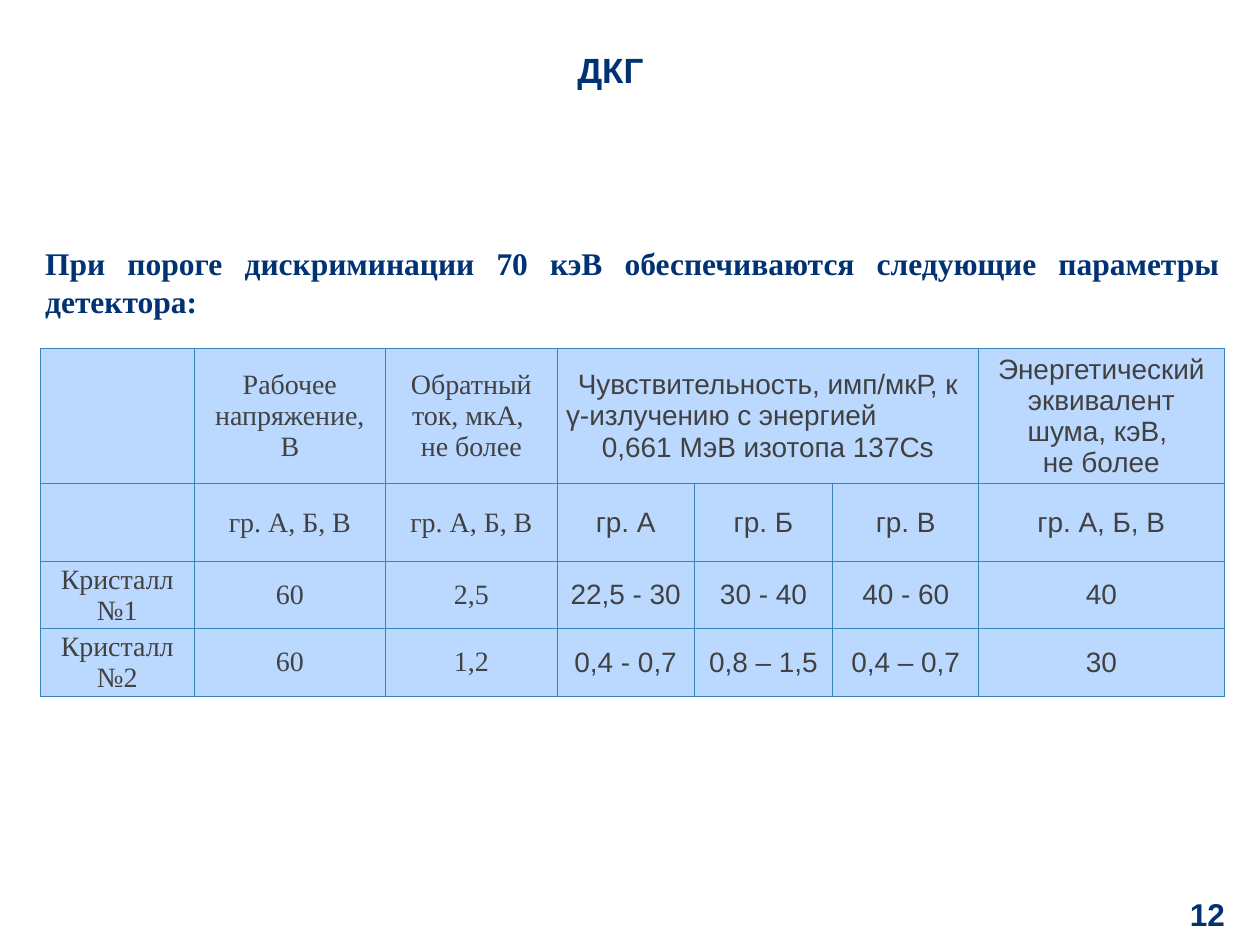
from lxml import etree
from pptx import Presentation
from pptx.dml.color import RGBColor
from pptx.enum.text import MSO_ANCHOR, PP_ALIGN
from pptx.oxml.ns import qn
from pptx.util import Pt

LEFT, CENTER = PP_ALIGN.LEFT, PP_ALIGN.CENTER
RIGHT, JUSTIFY = PP_ALIGN.RIGHT, PP_ALIGN.JUSTIFY
MIDDLE = MSO_ANCHOR.MIDDLE
SANS, SERIF = "Arial", "Times New Roman"
COLORS = {"navy": "003274", "text": "414142", "cell": "BBD9FF", "border": "3A84BC"}

# Content
TITLE = "ДКГ"
INTRO = "При пороге дискриминации 70 кэВ обеспечиваются следующие параметры детектора:"
PAGE = "12"
GROUPS = "гр. А, Б, В"
SENSITIVITY = ["Чувствительность, имп/мкР, к", "γ-излучению с энергией",
               "0,661 МэВ изотопа 137Cs"]
ROWS = [
    [[], ["Рабочее напряжение, В"], ["Обратный ток, мкА, ", "не более"], SENSITIVITY,
     [], [], ["Энергетический эквивалент шума, кэВ, ", "не более"]],
    [[], [GROUPS], [GROUPS], ["гр. А"], ["гр. Б"], ["гр. В"], [GROUPS]],
    [["Кристалл №1"], ["60"], ["2,5"], ["22,5 - 30"], ["30 - 40"], ["40 - 60"], ["40"]],
    [["Кристалл №2"], ["60"], ["1,2"], ["0,4 - 0,7"], ["0,8 – 1,5"], ["0,4 – 0,7"], ["30"]],
]
COLUMN_WIDTHS = [88, 109.3, 98.2, 78.2, 79.3, 83.3, 140.3]
ROW_HEIGHTS = [77, 44.6, 38.3, 38.3]
SERIF_COLUMNS = 3
SPAN = (3, 5)


def style(paragraph, font_name, size, color, bold, align):
    paragraph.alignment = align
    font = paragraph.font
    font.name, font.size, font.bold = font_name, Pt(size), bold
    font.color.rgb = RGBColor.from_string(COLORS[color])


def place_text(shape, box, text, font_name, size, align, anchor, margins=None):
    shape.left, shape.top, shape.width, shape.height = map(Pt, box)
    frame = shape.text_frame
    frame.word_wrap = True
    frame.vertical_anchor = anchor
    if margins is not None:
        frame.margin_left = frame.margin_right = Pt(margins)
        frame.margin_top = frame.margin_bottom = Pt(margins)
    frame.text = text
    style(frame.paragraphs[0], font_name, size, "navy", True, align)
    return frame.paragraphs[0]


def add_borders(cell):
    properties = cell._tc.get_or_add_tcPr()
    for side in ("lnL", "lnR", "lnT", "lnB"):
        line = etree.SubElement(properties, qn("a:" + side), w=str(Pt(0.75)))
        fill = etree.SubElement(line, qn("a:solidFill"))
        etree.SubElement(fill, qn("a:srgbClr"), val=COLORS["border"])


def fill_cell(cell, lines, font_name):
    add_borders(cell)
    cell.fill.solid()
    cell.fill.fore_color.rgb = RGBColor.from_string(COLORS["cell"])
    cell.vertical_anchor = MIDDLE
    cell.margin_left = cell.margin_right = Pt(5)
    cell.margin_top = cell.margin_bottom = 0
    cell.text_frame.text = "\n".join(lines)
    for paragraph in cell.text_frame.paragraphs:
        align = LEFT if paragraph.text == SENSITIVITY[1] else CENTER
        style(paragraph, font_name, 16, "text", False, align)


presentation = Presentation()
presentation.slide_width, presentation.slide_height = Pt(720), Pt(540)
slide = presentation.slides.add_slide(presentation.slide_layouts[5])
shapes = slide.shapes

# Title
title = place_text(shapes.title, (46.8, 20.9, 604, 40.3), TITLE, SANS, 20, CENTER, MIDDLE)
title.line_spacing = 0.9

# Page number
place_text(shapes.add_textbox(0, 0, 0, 0), (650.2, 507.6, 49.7, 29.5), PAGE,
           SANS, 18, RIGHT, MIDDLE, 0)

# Detector parameters
table = shapes.add_table(len(ROWS), len(COLUMN_WIDTHS), Pt(23), Pt(199.4),
                         Pt(sum(COLUMN_WIDTHS)), Pt(sum(ROW_HEIGHTS))).table
for column, width in zip(table.columns, COLUMN_WIDTHS):
    column.width = Pt(width)
for row, height in zip(table.rows, ROW_HEIGHTS):
    row.height = Pt(height)
for r, row_content in enumerate(ROWS):
    for c, lines in enumerate(row_content):
        fill_cell(table.cell(r, c), lines, SERIF if c < SERIF_COLUMNS else SANS)
table.cell(0, SPAN[0]).merge(table.cell(0, SPAN[1]))

# Introduction
place_text(shapes.add_textbox(0, 0, 0, 0), (18.7, 136.1, 685.4, 51.1), INTRO,
           SERIF, 18, JUSTIFY, MSO_ANCHOR.TOP)

presentation.save("out.pptx")
